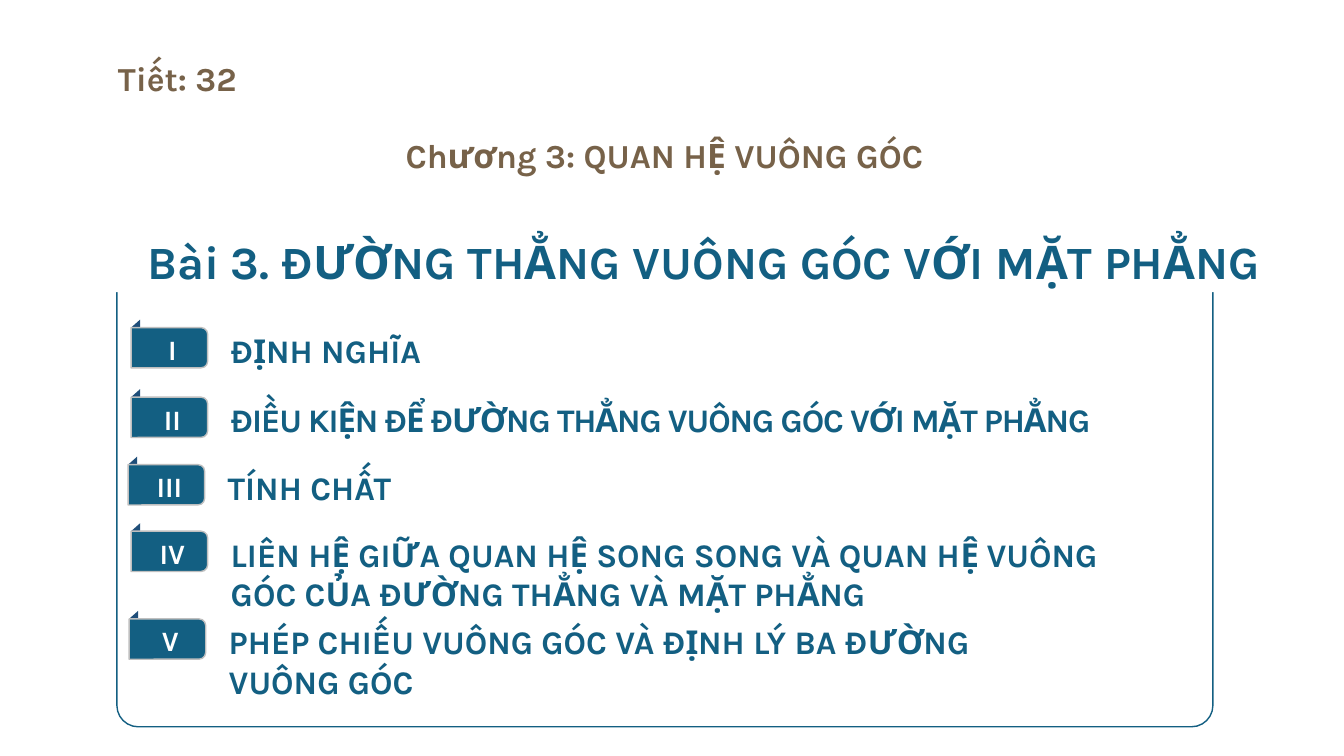
from dataclasses import dataclass

from pptx import Presentation
from pptx.dml.color import RGBColor
from pptx.enum.shapes import MSO_SHAPE
from pptx.enum.text import MSO_ANCHOR, PP_ALIGN
from pptx.shapes.autoshape import Shape
from pptx.slide import Slide
from pptx.util import Inches, Pt

FONT = "Karla"
TEAL, NAVY, BROWN = "135F82", "1F4E79", "776249"
GREY, WHITE = "BFBFBF", "FFFFFF"
BADGE_WIDTH, BADGE_HEIGHT = 0.76, 0.4
FLAP_WIDTH, FLAP_HEIGHT = 0.09, 0.08


@dataclass(frozen=True)
class Section:
    numeral: str
    heading: tuple[str, ...]
    left: float
    top: float
    spacing: float = 0


@dataclass(frozen=True)
class TextStyle:
    size: float
    color: str
    align: PP_ALIGN = PP_ALIGN.LEFT
    space_before: float = 0
    line_spacing: float | None = None
    character_spacing: float = 0


SECTIONS = (
    Section("I", ("ĐỊNH NGHĨA",), 1.3, 3.25),
    Section("II", ("ĐIỀU KIỆN ĐỂ ĐƯỜNG THẲNG VUÔNG GÓC VỚI MẶT PHẲNG",), 1.3, 3.94, -0.8),
    Section("III", ("TÍNH CHẤT",), 1.27, 4.61),
    Section("IV", ("LIÊN HỆ GIỮA QUAN HỆ SONG SONG VÀ QUAN HỆ VUÔNG",
                   "GÓC CỦA ĐƯỜNG THẲNG VÀ MẶT PHẲNG"), 1.3, 5.27),
    Section("V", ("PHÉP CHIẾU VUÔNG GÓC VÀ ĐỊNH LÝ BA ĐƯỜNG",
                  "VUÔNG GÓC"), 1.28, 6.14),
)


def rgb(color: str) -> RGBColor:
    return RGBColor.from_string(color)


def paint(shape: Shape, fill: str | None = None, line: str | None = None) -> None:
    shape.shadow.inherit = False
    if fill:
        shape.fill.solid()
        shape.fill.fore_color.rgb = rgb(fill)
    else:
        shape.fill.background()
    if line:
        shape.line.color.rgb = rgb(line)
        shape.line.width = Pt(1)
    else:
        shape.line.fill.background()


def write(shape: Shape, lines: tuple[str, ...], style: TextStyle,
          margins: tuple[float, float] = (0.1, 0.05), wrap: bool = True) -> None:
    """Fill a shape with one paragraph per line; margins are horizontal, vertical."""
    frame = shape.text_frame
    frame.word_wrap = wrap
    frame.vertical_anchor = MSO_ANCHOR.TOP
    frame.margin_left = frame.margin_right = Inches(margins[0])
    frame.margin_top = frame.margin_bottom = Inches(margins[1])
    for index, line in enumerate(lines):
        paragraph = frame.add_paragraph() if index else frame.paragraphs[0]
        paragraph.alignment = style.align
        paragraph.space_before = Pt(style.space_before)
        if style.line_spacing:
            paragraph.line_spacing = Pt(style.line_spacing)
        run = paragraph.add_run()
        run.text = line
        run.font.name = FONT
        run.font.size = Pt(style.size)
        run.font.bold = True
        run.font.color.rgb = rgb(style.color)
        if style.character_spacing:
            run.font._element.set("spc", str(round(style.character_spacing * 100)))


def add_text_box(slide: Slide, left: float, top: float, width: float, height: float) -> Shape:
    return slide.shapes.add_textbox(Inches(left), Inches(top), Inches(width), Inches(height))


def add_section(slide: Slide, section: Section) -> None:
    heading = add_text_box(slide, section.left + 0.89, section.top - 0.02,
                           9.88, 0.11 + 0.39 * len(section.heading))
    write(heading, section.heading,
          TextStyle(23.5, TEAL, character_spacing=section.spacing))

    right = Inches(section.left + FLAP_WIDTH)
    builder = slide.shapes.build_freeform(right, Inches(section.top))
    builder.add_line_segments([
        (Inches(section.left), Inches(section.top)),
        (right, Inches(section.top - FLAP_HEIGHT)),
    ])
    paint(builder.convert_to_shape(), NAVY)

    # The badge stands upright before its quarter turn, so its frame is swapped.
    shift = (BADGE_WIDTH - BADGE_HEIGHT) / 2
    badge = slide.shapes.add_shape(
        MSO_SHAPE.ROUND_2_SAME_RECTANGLE,
        Inches(section.left + shift), Inches(section.top - shift),
        Inches(BADGE_HEIGHT), Inches(BADGE_WIDTH))
    badge.rotation = 90
    paint(badge, TEAL, GREY)

    numeral = add_text_box(slide, section.left + 0.1, section.top, 0.62, 0.44)
    write(numeral, (section.numeral,), TextStyle(20, WHITE, PP_ALIGN.CENTER), wrap=False)


def main() -> None:
    presentation = Presentation()
    presentation.slide_width = Inches(13.33)
    presentation.slide_height = Inches(7.5)
    slide = presentation.slides.add_slide(presentation.slide_layouts[6])
    tight = (0.05, 0.02)

    outline = slide.shapes.add_shape(MSO_SHAPE.ROUNDED_RECTANGLE, Inches(1.16), Inches(2.62),
                                     Inches(10.87), Inches(4.59))
    outline.adjustments[0] = 0.046
    paint(outline, line=TEAL)

    chapter = add_text_box(slide, 1.11, 1.32, 10.96, 0.45)
    write(chapter, ("Chương 3: QUAN HỆ VUÔNG GÓC",),
          TextStyle(24, BROWN, PP_ALIGN.CENTER, space_before=6), tight)

    lesson = slide.shapes.add_shape(MSO_SHAPE.RECTANGLE, Inches(0.9), Inches(2.43),
                                    Inches(12.16), Inches(0.47))
    paint(lesson, WHITE)
    write(lesson, ("Bài 3. ĐƯỜNG THẲNG VUÔNG GÓC VỚI MẶT PHẲNG",),
          TextStyle(33, TEAL, PP_ALIGN.CENTER, space_before=9, line_spacing=30),
          tight, wrap=False)

    for section in SECTIONS:
        add_section(slide, section)

    period = add_text_box(slide, 1.12, 0.55, 1.65, 0.45)
    write(period, ("Tiết: 32",), TextStyle(24, BROWN, space_before=6), tight)

    presentation.save("out.pptx")


if __name__ == "__main__":
    main()
